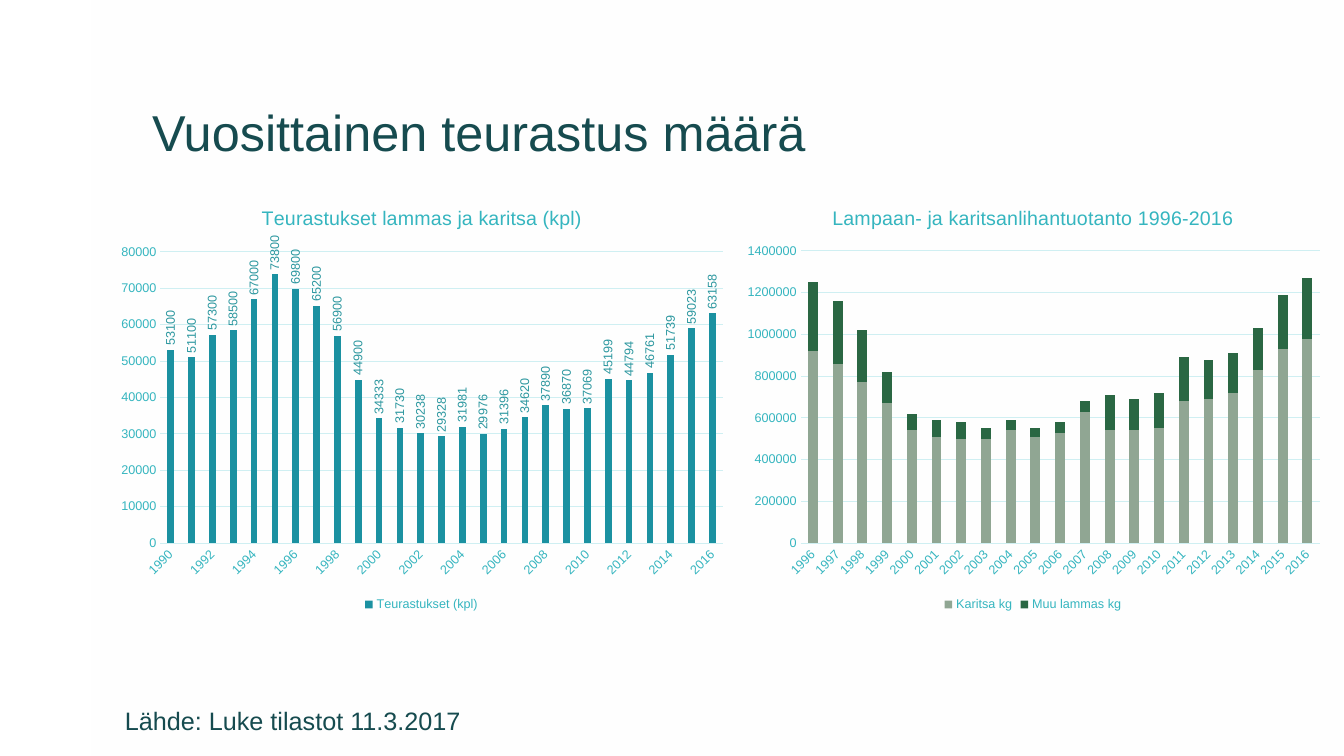
"""Build a slide with two column charts of yearly sheep slaughter and meat output."""
import lxml.etree
import pptx
import pptx.chart.data
import pptx.dml.color
import pptx.enum.chart
import pptx.enum.shapes
import pptx.enum.text
import pptx.oxml.ns
import pptx.util

Inches = pptx.util.Inches
Pt = pptx.util.Pt
qn = pptx.oxml.ns.qn
ChartType = pptx.enum.chart.XL_CHART_TYPE
Anchor = pptx.enum.text.MSO_ANCHOR


def color(value):
    return pptx.dml.color.RGBColor.from_string(value)


class SlideBuilder:
    font_name = "Arial"
    dark = "164B4F"
    teal = "35B5BF"
    grid = "CFEFF2"
    chart_top = 1.87
    chart_height = 4.24
    heading_top = 0.13

    def __init__(self, deck):
        self.slide = deck.slides.add_slide(deck.slide_layouts[6])

    def style_font(self, font, size, value):
        font.name = self.font_name
        font.size = Pt(size)
        font.bold = False
        font.color.rgb = color(value)

    def panel(self, left, top, width, height, fill):
        shape = self.slide.shapes.add_shape(
            pptx.enum.shapes.MSO_SHAPE.RECTANGLE,
            Inches(left), Inches(top), Inches(width), Inches(height))
        shape.shadow.inherit = False
        shape.fill.solid()
        shape.fill.fore_color.rgb = color(fill)
        shape.line.fill.background()

    def text(self, left, top, width, height, wording, size, anchor):
        box = self.slide.shapes.add_textbox(
            Inches(left), Inches(top), Inches(width), Inches(height))
        frame = box.text_frame
        frame.word_wrap = True
        frame.vertical_anchor = anchor
        frame.text = wording
        para = frame.paragraphs[0]
        para.line_spacing = 0.9
        self.style_font(para.runs[0].font, size, self.dark)

    def place(self, parent, index, chart_width, **lengths):
        for old in parent.findall(qn("c:layout")):
            parent.remove(old)
        layout = lxml.etree.Element(qn("c:layout"))
        manual = lxml.etree.SubElement(layout, qn("c:manualLayout"))
        if "w" in lengths:
            lxml.etree.SubElement(manual, qn("c:layoutTarget")).set("val", "inner")
        for mode in ("xMode", "yMode"):
            lxml.etree.SubElement(manual, qn("c:" + mode)).set("val", "edge")
        for key, length in lengths.items():
            whole = chart_width if key in "xw" else self.chart_height
            lxml.etree.SubElement(manual, qn("c:" + key)).set("val", str(length / whole))
        parent.insert(index, layout)

    def rotate(self, element, degrees):
        body = element.find(qn("c:txPr")).find(qn("a:bodyPr"))
        body.set("rot", str(degrees * 60000))
        body.set("vert", "horz")

    def style_axes(self, chart, maximum, step):
        for axis in (chart.category_axis, chart.value_axis):
            axis.major_tick_mark = pptx.enum.chart.XL_TICK_MARK.NONE
            axis.minor_tick_mark = pptx.enum.chart.XL_TICK_MARK.NONE
            self.style_font(axis.tick_labels.font, 9, self.teal)
        chart.value_axis.format.line.fill.background()
        chart.value_axis.minimum_scale = 0
        chart.value_axis.maximum_scale = maximum
        chart.value_axis.major_unit = step
        chart.value_axis.has_major_gridlines = True
        for target in (chart.category_axis, chart.value_axis.major_gridlines):
            target.format.line.color.rgb = color(self.grid)
            target.format.line.width = Pt(0.75)
        self.rotate(chart.category_axis._element, -45)

    def chart(self, kind, left, width, title, title_left, plot_area, years, series,
              gap, overlap, maximum, step):
        data = pptx.chart.data.CategoryChartData()
        data.categories = [str(year) for year in years]
        for name, values, _ in series:
            data.add_series(name, values)
        chart = self.slide.shapes.add_chart(
            kind, Inches(left), Inches(self.chart_top),
            Inches(width), Inches(self.chart_height), data).chart
        self.style_font(chart.font, 10, self.dark)
        chart.has_title = True
        chart.chart_title.text_frame.text = title
        heading = chart.chart_title.text_frame.paragraphs[0]
        self.style_font(heading.runs[0].font, 14, self.teal)
        self.place(chart.chart_title._element, 1, width, x=title_left, y=self.heading_top)
        chart.has_legend = True
        chart.legend.position = pptx.enum.chart.XL_LEGEND_POSITION.BOTTOM
        chart.legend.include_in_layout = False
        self.style_font(chart.legend.font, 9, self.teal)
        self.style_axes(chart, maximum, step)
        plot = chart.plots[0]
        plot.vary_by_categories = False
        plot.gap_width = gap
        plot.overlap = overlap
        for bars, (_, _, fill) in zip(plot.series, series):
            bars.format.fill.solid()
            bars.format.fill.fore_color.rgb = color(fill)
        self.place(plot._element.getparent(), 0, width, **plot_area)
        return chart

    def value_labels(self, chart):
        labels = chart.plots[0].series[0].data_labels
        labels.show_value = True
        labels.position = pptx.enum.chart.XL_LABEL_POSITION.OUTSIDE_END
        self.style_font(labels.font, 9, "2C979F")
        self.rotate(labels._element, -90)


def main():
    deck = pptx.Presentation()
    deck.slide_width = Inches(13.33)
    deck.slide_height = Inches(7.5)
    builder = SlideBuilder(deck)
    builder.panel(0.91, 0, 12.41, 7.5, "FEFEFE")
    builder.text(1.41, 0.41, 10.5, 1.25, "Vuosittainen teurastus määrä", 36, Anchor.BOTTOM)

    slaughtered = [
        53100, 51100, 57300, 58500, 67000, 73800, 69800, 65200, 56900,
        44900, 34333, 31730, 30238, 29328, 31981, 29976, 31396, 34620,
        37890, 36870, 37069, 45199, 44794, 46761, 51739, 59023, 63158]
    slaughter_chart = builder.chart(
        ChartType.COLUMN_CLUSTERED, 1.07, 6.22,
        "Teurastukset lammas ja karitsa (kpl)", 1.49,
        {"x": 0.52, "y": 0.63, "w": 5.58, "h": 2.89},
        range(1990, 2017), [("Teurastukset (kpl)", slaughtered, "1B91A1")],
        gap=219, overlap=-27, maximum=80000, step=10000)
    builder.value_labels(slaughter_chart)

    lamb = [
        920000, 860000, 770000, 670000, 540000, 510000, 500000,
        500000, 540000, 510000, 530000, 630000, 540000, 540000,
        550000, 680000, 690000, 720000, 830000, 930000, 980000]
    other_sheep = [
        330000, 300000, 250000, 150000, 80000, 80000, 80000,
        50000, 50000, 40000, 50000, 50000, 170000, 150000,
        170000, 210000, 190000, 190000, 200000, 260000, 290000]
    builder.chart(
        ChartType.COLUMN_STACKED, 7.29, 5.91,
        "Lampaan- ja karitsanlihantuotanto 1996-2016", 0.93,
        {"x": 0.65, "y": 0.62, "w": 5.15, "h": 2.9},
        range(1996, 2017),
        [("Karitsa kg", lamb, "90A693"), ("Muu lammas kg", other_sheep, "2A6743")],
        gap=150, overlap=100, maximum=1400000, step=200000)

    builder.text(1.07, 6.98, 3.62, 0.37, " Lähde: Luke tilastot 11.3.2017", 18, Anchor.TOP)
    deck.save("out.pptx")


if __name__ == "__main__":
    main()
